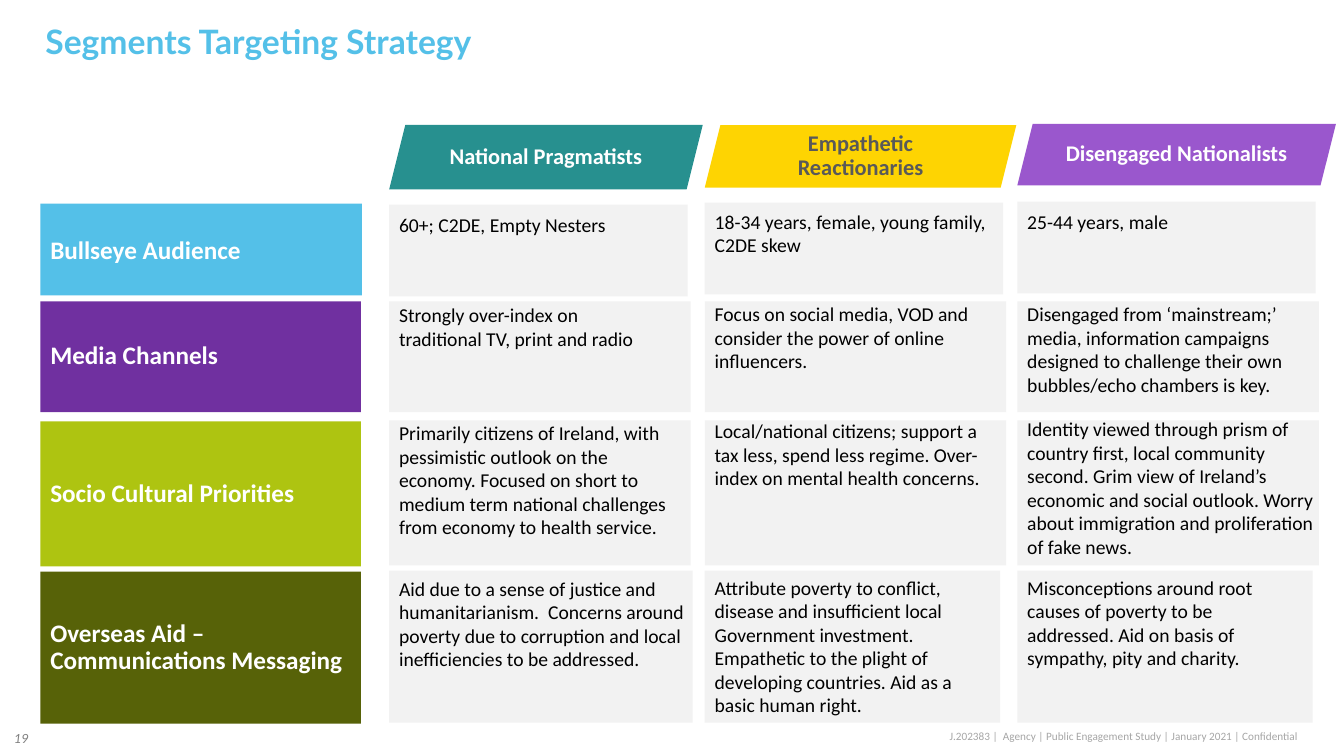
from pptx import Presentation
from pptx.dml.color import RGBColor
from pptx.enum.shapes import MSO_SHAPE as Preset
from pptx.enum.text import MSO_ANCHOR as Anchor, PP_ALIGN as Align
from pptx.util import Inches, Pt

COLUMN_LEFTS = [3.86, 6.99, 10.09]
LABEL_LEFT = 0.4
CELL_FILL, CELL_TEXT = "F2F2F2", "000000"

# Name, fill, text colour, top, width, height
SEGMENTS = [
    ("National Pragmatists", "27908F", "FFFFFF", 1.24, 3.11, 0.64),
    ("Empathetic Reactionaries", "FED402", "595959", 1.24, 3.09, 0.62),
    ("Disengaged Nationalists", "9A57CD", "FFFFFF", 1.23, 3.16, 0.61),
]

# Label, fill, label box (top, width, height), right inset, line spacing
LABELS = [
    ("Bullseye Audience", "54C0E8", (2.02, 3.19, 0.91), 1.02, 1.0),
    ("Media Channels", "7030A0", (2.99, 3.18, 1.1), 0.39, 0.9),
    ("Socio Cultural Priorities", "AEC411", (4.18, 3.18, 1.44), 0, 0.9),
    ("Overseas Aid – Communications Messaging", "576208", (5.67, 3.18, 1.51), 0, 0.9),
]

# For each row: cell (top, width, height), text (top, width, height) or None
# when the text sits in the cell itself, then the paragraphs
CELLS = [
    [
        ((2.03, 2.96, 0.91), (2.06, 2.84, 0.34), ["60+; C2DE, Empty Nesters"]),
        ((2.01, 2.96, 0.91), (2.03, 2.99, 0.57),
         ["18-34 years, female, young family, C2DE skew"]),
        ((2.0, 2.96, 0.91), (2.03, 2.84, 0.34), ["25-44 years, male"]),
    ],
    [
        ((2.99, 2.99, 1.1), (2.96, 2.84, 0.57),
         ["Strongly over-index on traditional TV, print and radio"]),
        ((2.99, 2.99, 1.1), (2.95, 2.84, 0.81),
         ["Focus on social media, VOD and consider the power of online influencers."]),
        ((2.99, 2.99, 1.1), (2.95, 2.84, 1.04),
         ["Disengaged from ‘mainstream;’ media, information campaigns",
          "designed to challenge their own bubbles/echo chambers is key."]),
    ],
    [
        ((4.17, 2.99, 1.44), (4.13, 3.07, 1.28),
         ["Primarily citizens of Ireland, with pessimistic outlook on the economy. "
          "Focused on short to medium term national challenges from economy to "
          "health service."]),
        ((4.17, 2.99, 1.44), (4.11, 2.84, 0.81),
         ["Local/national citizens; support a tax less, spend less regime. "
          "Over-index on mental health concerns."]),
        ((4.17, 2.99, 1.44), (4.09, 3.07, 1.51),
         ["Identity viewed through prism of country first, local community second. "
          "Grim view of Ireland’s economic and social outlook. Worry about "
          "immigration and proliferation of fake news."]),
    ],
    [
        ((5.66, 3.01, 1.51), (5.67, 3.03, 1.04),
         ["Aid due to a sense of justice and humanitarianism.  Concerns around "
          "poverty due to corruption and local inefficiencies to be addressed."]),
        ((5.66, 2.93, 1.51), None,
         ["Attribute poverty to conflict, disease and insufficient local Government "
          "investment. Empathetic to the plight of developing countries. Aid as a "
          "basic human right."]),
        ((5.66, 2.93, 1.51), None,
         ["Misconceptions around root causes of poverty to be addressed. Aid on "
          "basis of sympathy, pity and charity."]),
    ],
]


def color(value):
    return RGBColor.from_string(value)


def write(shape, paragraphs, size, text_color, bold=False, italic=False,
          font="Calibri", align=Align.LEFT, anchor=Anchor.TOP, spacing=1.0,
          insets=(0.1, 0.05, 0.1, 0.05)):
    frame = shape.text_frame
    frame.word_wrap = True
    frame.vertical_anchor = anchor
    (frame.margin_left, frame.margin_top,
     frame.margin_right, frame.margin_bottom) = map(Inches, insets)
    for index, text in enumerate(paragraphs):
        paragraph = frame.add_paragraph() if index else frame.paragraphs[0]
        paragraph.alignment = align
        paragraph.line_spacing = spacing
        paragraph.space_before = Pt(0)
        run = paragraph.add_run()
        run.text = text
        run.font.name = font
        run.font.size = Pt(size)
        run.font.bold = bold
        run.font.italic = italic
        run.font.color.rgb = color(text_color)


def add_block(slide, box, fill, preset=Preset.RECTANGLE):
    shape = slide.shapes.add_shape(preset, *map(Inches, box))
    shape.shadow.inherit = False
    shape.fill.solid()
    shape.fill.fore_color.rgb = color(fill)
    shape.line.fill.background()
    return shape


def add_text(slide, box, paragraphs, size, text_color, **style):
    shape = slide.shapes.add_textbox(*map(Inches, box))
    write(shape, paragraphs, size, text_color, **style)


def add_title(slide, box, text):
    title = slide.shapes.title
    title.left, title.top, title.width, title.height = map(Inches, box)
    write(title, [text], 24, "54C0E8", bold=True, font="Lato", spacing=0.9)


def add_segment_header(slide, box, name, fill, text_color):
    shape = add_block(slide, box, fill, Preset.PARALLELOGRAM)
    write(shape, [name], 16, text_color, bold=True, align=Align.CENTER,
          anchor=Anchor.MIDDLE, spacing=0.9, insets=(0.08, 0.04, 0.08, 0.04))


def add_row_label(slide, box, label, fill, right_inset, spacing):
    shape = add_block(slide, box, fill)
    write(shape, [label], 18, "FFFFFF", bold=True, anchor=Anchor.MIDDLE,
          spacing=spacing, insets=(0.1, 0.05, right_inset, 0.05))


def add_cell(slide, left, cell, text_area, paragraphs):
    top, width, height = cell
    shape = add_block(slide, (left, top, width, height), CELL_FILL)
    if text_area is None:
        write(shape, paragraphs, 14, CELL_TEXT)
    else:
        add_text(slide, (left, *text_area), paragraphs, 14, CELL_TEXT)


def add_footer(slide):
    add_text(slide, (0.04, 7.12, 0.58, 0.4), ["19"], 10, "808080",
             italic=True, anchor=Anchor.MIDDLE)
    add_text(slide, (9.32, 7.19, 4.65, 0.24),
             ["J.202383 |  Agency | Public Engagement Study | January 2021 | Confidential"],
             8, "A6A6A6")


def main():
    presentation = Presentation()
    presentation.slide_width = Inches(13.33)
    presentation.slide_height = Inches(7.5)
    slide = presentation.slides.add_slide(presentation.slide_layouts[5])

    add_footer(slide)
    add_title(slide, (0.35, 0.2, 10.3, 0.58), "Segments Targeting Strategy")

    # Column headers
    for left, (name, fill, text_color, *area) in zip(COLUMN_LEFTS, SEGMENTS):
        add_segment_header(slide, (left, *area), name, fill, text_color)

    # Rows: a label and one cell per segment
    for (label, fill, area, right_inset, spacing), cells in zip(LABELS, CELLS):
        add_row_label(slide, (LABEL_LEFT, *area), label, fill, right_inset, spacing)
        for left, cell in zip(COLUMN_LEFTS, cells):
            add_cell(slide, left, *cell)

    presentation.save("out.pptx")


if __name__ == "__main__":
    main()
